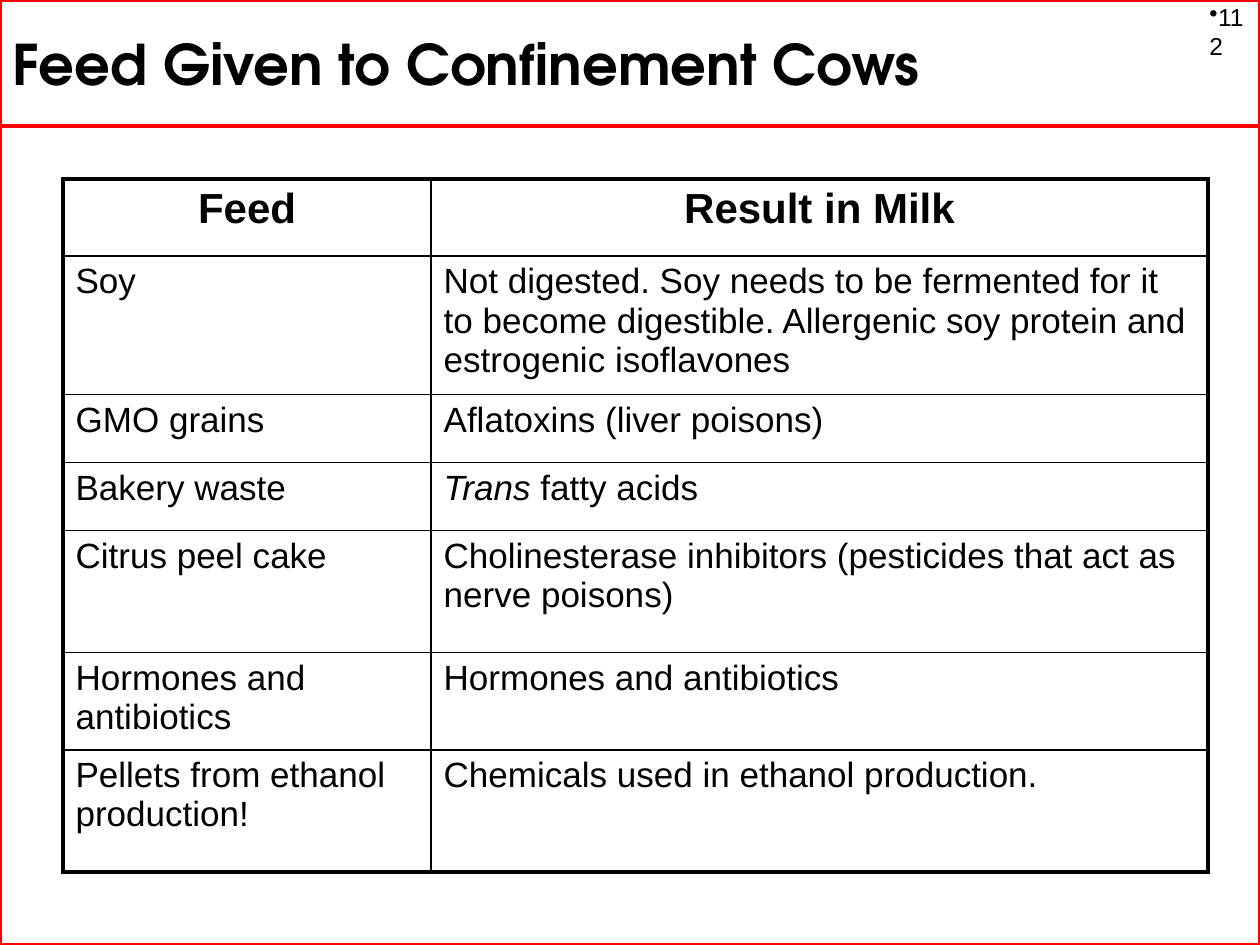
from dataclasses import dataclass

from lxml import etree
from pptx import Presentation
from pptx.dml.color import RGBColor
from pptx.enum.shapes import MSO_SHAPE
from pptx.enum.text import MSO_ANCHOR, MSO_AUTO_SIZE, PP_ALIGN
from pptx.oxml.ns import qn
from pptx.util import Cm, Pt

RECTANGLE = MSO_SHAPE.RECTANGLE
MIDDLE = MSO_ANCHOR.MIDDLE
NO_AUTOFIT = MSO_AUTO_SIZE.NONE
LEFT, CENTER = PP_ALIGN.LEFT, PP_ALIGN.CENTER
TITLE_ONLY = 5


@dataclass(frozen=True)
class Theme:
    """Colours, fonts, type sizes and line widths of the slide."""
    ink: str = "000000"
    accent: str = "FF0000"
    title_font: str = "TeX Gyre Adventor"
    body_font: str = "Arial"
    title_size: int = 32
    header_size: int = 24
    body_size: int = 20
    number_size: int = 14
    thick: float = 2.25
    thin: float = 1


THEME = Theme()
TITLE = "Feed Given to Confinement Cows"
PAGE_NUMBER = "112"
COLUMN_WIDTHS = (7.42, 15.66)
ROWS = (
    (1.55, "Feed", ("Result in Milk",)),
    (2.79, "Soy", ("Not digested. Soy needs to be fermented for it to become digestible. "
                   "Allergenic soy protein and estrogenic isoflavones",)),
    (1.37, "GMO grains", ("Aflatoxins (liver poisons)",)),
    (1.37, "Bakery waste", ("Trans", " fatty acids")),
    (2.46, "Citrus peel cake",
     ("Cholinesterase inhibitors (pesticides that act as nerve poisons)",)),
    (1.96, "Hormones and antibiotics", ("Hormones and antibiotics",)),
    (2.46, "Pellets from ethanol production!", ("Chemicals used in ethanol production.",)),
)


def style_paragraph(paragraph, size, font_name=THEME.body_font, bold=False, alignment=LEFT):
    """Set the type and alignment of a whole paragraph."""
    paragraph.alignment = alignment
    font = paragraph.font
    font.name, font.size, font.bold = font_name, Pt(size), bold
    font.color.rgb = RGBColor.from_string(THEME.ink)


def outline(shape):
    """Give a shape the accent outline."""
    shape.line.color.rgb = RGBColor.from_string(THEME.accent)
    shape.line.width = Pt(THEME.thick)


def add_frame(slide, left, top, width, height):
    """Draw the outlined frame around the slide."""
    frame = slide.shapes.add_shape(RECTANGLE, left, top, width, height)
    frame.shadow.inherit = False
    frame.fill.background()
    outline(frame)


def add_title(slide, left, top, width, height):
    """Place and format the title band."""
    title = slide.shapes.title
    title.left, title.top, title.width, title.height = left, top, width, height
    outline(title)
    text_frame = title.text_frame
    text_frame.text = TITLE
    text_frame.auto_size = NO_AUTOFIT
    text_frame.vertical_anchor = MIDDLE
    style_paragraph(text_frame.paragraphs[0], THEME.title_size, THEME.title_font, True)


def add_page_number(slide, left, top, width, height):
    """Place the bulleted page number."""
    text_frame = slide.shapes.add_textbox(left, top, width, height).text_frame
    text_frame.word_wrap = True
    text_frame.vertical_anchor = MIDDLE
    text_frame.text = PAGE_NUMBER
    paragraph = text_frame.paragraphs[0]
    properties = paragraph._p.get_or_add_pPr()
    etree.SubElement(properties, qn("a:buChar")).set("char", "•")
    style_paragraph(paragraph, THEME.number_size)


def set_borders(cell, outer_sides):
    """Draw cell borders, thick on the outer sides."""
    properties = cell._tc.get_or_add_tcPr()
    for side in "LRTB":
        width = THEME.thick if side in outer_sides else THEME.thin
        line = etree.SubElement(properties, qn(f"a:ln{side}"), w=str(int(Pt(width))))
        fill = etree.SubElement(line, qn("a:solidFill"))
        etree.SubElement(fill, qn("a:srgbClr"), val=THEME.ink)


def fill_cell(cell, texts, is_header, outer_sides):
    """Write and format one cell; the first of two runs is italic."""
    paragraph = cell.text_frame.paragraphs[0]
    for text in texts:
        paragraph.add_run().text = text
    if len(texts) > 1:
        paragraph.runs[0].font.italic = True
    if is_header:
        style_paragraph(paragraph, THEME.header_size, bold=True, alignment=CENTER)
    else:
        style_paragraph(paragraph, THEME.body_size)
    set_borders(cell, outer_sides)
    cell.fill.background()


def add_feed_table(slide, left, top, width, height):
    """Place the table of feeds and their results in milk."""
    table = slide.shapes.add_table(len(ROWS), len(COLUMN_WIDTHS), left, top, width, height).table
    table.first_row = table.horz_banding = False
    for column, column_width in zip(table.columns, COLUMN_WIDTHS):
        column.width = Cm(column_width)
    for index, (row_height, feed, result) in enumerate(ROWS):
        table.rows[index].height = Cm(row_height)
        edge = {0: "T", len(ROWS) - 1: "B"}.get(index, "")
        fill_cell(table.cell(index, 0), (feed,), index == 0, "L" + edge)
        fill_cell(table.cell(index, 1), result, index == 0, "R" + edge)


def main():
    """Build and save the slide."""
    presentation = Presentation()
    width, height = Cm(25.4), Cm(19.05)
    presentation.slide_width, presentation.slide_height = width, height
    slide = presentation.slides.add_slide(presentation.slide_layouts[TITLE_ONLY])
    number_side = Cm(1.27)
    add_frame(slide, 0, 0, width, height)
    add_page_number(slide, width - number_side, 0, number_side, number_side)
    add_title(slide, 0, 0, width, Cm(2.54))
    add_feed_table(slide, Cm(1.27), Cm(3.61), Cm(sum(COLUMN_WIDTHS)),
                   Cm(sum(row[0] for row in ROWS)))
    presentation.save("out.pptx")


if __name__ == "__main__":
    main()
